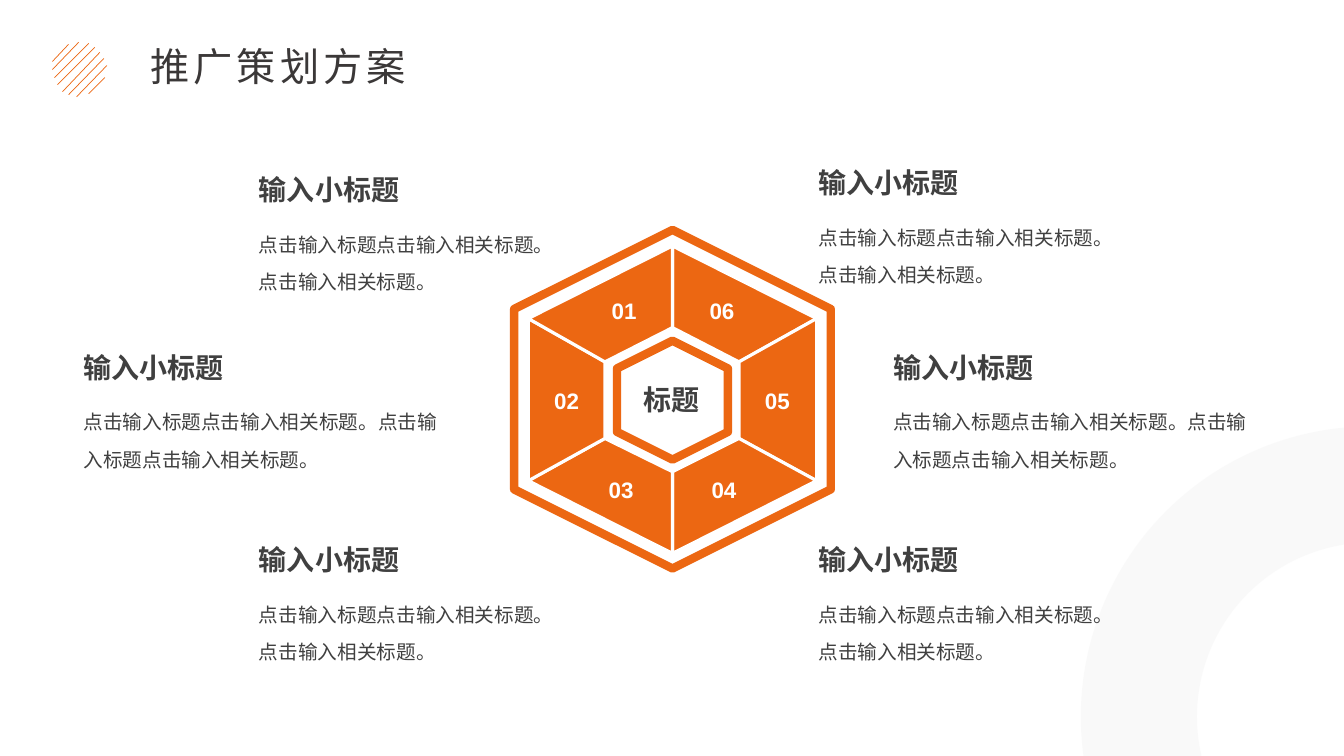
from dataclasses import dataclass

from lxml import etree
from pptx import Presentation, util as u
from pptx.dml.color import RGBColor
from pptx.enum import shapes, text
from pptx.oxml import ns

PX = 9144
FONT = "Arial"
COLORS = {
    "accent": "EC6712",
    "title": "3B3838",
    "body": "404040",
    "white": "FFFFFF",
    "ring": "F2F2F2",
}
CENTER = text.PP_ALIGN.CENTER
MIDDLE = text.MSO_ANCHOR.MIDDLE


@dataclass(frozen=True)
class Box:
    x: int
    y: int
    w: int
    h: int

    def emu(self) -> list[int]:
        return [v * PX for v in (self.x, self.y, self.w, self.h)]


@dataclass(frozen=True)
class Style:
    size: int
    color: str = "body"
    bold: bool = False
    align: text.PP_ALIGN | None = None
    anchor: text.MSO_ANCHOR = text.MSO_ANCHOR.TOP
    leading: float | None = None
    spacing: int = 0
    grow: bool = False


@dataclass(frozen=True)
class Card:
    x: int
    y: int
    w: int
    body: str


@dataclass(frozen=True)
class Number:
    label: str
    x: int
    y: int


@dataclass(frozen=True)
class Stripe:
    x1: int
    y1: int
    x2: int
    y2: int


TITLE = Style(28, "title", leading=0.9, spacing=300, grow=True)
HEADING = Style(20, bold=True, anchor=MIDDLE)
BODY = Style(14, leading=1.6)
CORE = Style(20, bold=True, align=CENTER, anchor=MIDDLE)
NUMBER = Style(16, "white", bold=True, align=CENTER, grow=True)

SHORT = "点击输入标题点击输入相关标题。点击输入相关标题。"
LONG = "点击输入标题点击输入相关标题。点击输入标题点击输入相关标题。"
CARDS = [
    Card(247, 164, 330, SHORT),
    Card(247, 531, 330, SHORT),
    Card(73, 340, 383, LONG),
    Card(876, 340, 383, LONG),
    Card(802, 157, 330, SHORT),
    Card(802, 531, 330, SHORT),
]
NUMBERS = [
    Number("01", 595, 290),
    Number("02", 538, 379),
    Number("03", 592, 467),
    Number("04", 694, 467),
    Number("05", 747, 379),
    Number("06", 692, 290),
]
STRIPES = [
    Stripe(52, 69, 78, 42),
    Stripe(54, 77, 88, 43),
    Stripe(57, 84, 94, 47),
    Stripe(62, 91, 99, 52),
    Stripe(68, 94, 103, 58),
    Stripe(76, 96, 106, 65),
    Stripe(88, 93, 104, 77),
    Stripe(52, 61, 68, 44),
]
OUTER = [(667, 244), (810, 316), (810, 477), (667, 549), (524, 477), (524, 316)]
INNER = [(667, 325), (733, 359), (733, 435), (667, 468), (600, 435), (600, 359)]
HEXAGONS = [Box(499, 239, 336, 314), Box(608, 342, 118, 110)]


def rgb(name: str) -> RGBColor:
    return RGBColor.from_string(COLORS[name])


def add_text(parent, box: Box, content: str, style: Style) -> None:
    tf = parent.add_textbox(*box.emu()).text_frame
    tf.word_wrap = not style.grow
    if style.grow:
        tf.auto_size = text.MSO_AUTO_SIZE.SHAPE_TO_FIT_TEXT
    tf.vertical_anchor = style.anchor
    p = tf.paragraphs[0]
    p.alignment = style.align
    p.line_spacing = style.leading
    r = p.add_run()
    r.text = content
    r.font.name = FONT
    r.font.size = u.Pt(style.size)
    r.font.bold = style.bold
    r.font.color.rgb = rgb(style.color)
    if style.spacing:
        r._r.get_or_add_rPr().set("spc", str(style.spacing))


def add_stripe(parent, stripe: Stripe) -> None:
    ends = [v * PX for v in (stripe.x1, stripe.y1, stripe.x2, stripe.y2)]
    line = parent.add_connector(shapes.MSO_CONNECTOR.STRAIGHT, *ends)
    line.line.color.rgb = rgb("accent")
    line.line.width = u.Pt(0.5)
    etree.SubElement(line._element.spPr, ns.qn("a:effectLst"))


def add_ring(parent, box: Box) -> None:
    sp = parent.add_shape(shapes.MSO_SHAPE.DONUT, *box.emu())
    sp.shadow.inherit = False
    sp.adjustments[0] = 0.2
    sp.fill.solid()
    sp.fill.fore_color.rgb = rgb("ring")
    sp.line.fill.background()
    color = sp._element.spPr.find(".//" + ns.qn("a:srgbClr"))
    etree.SubElement(color, ns.qn("a:alpha"), val="40000")


def add_segment(parent, corners: list[tuple[int, int]]) -> None:
    builder = parent.build_freeform(*corners[0], scale=PX)
    builder.add_line_segments(corners[1:], close=True)
    sp = builder.convert_to_shape()
    sp.shadow.inherit = False
    sp.fill.solid()
    sp.fill.fore_color.rgb = rgb("accent")
    sp.line.color.rgb = rgb("white")
    sp.line.width = u.Pt(2.25)


def add_hexagon(parent, box: Box) -> None:
    sp = parent.add_shape(shapes.MSO_SHAPE.HEXAGON, *box.emu())
    sp.shadow.inherit = False
    sp.rotation = 270
    sp.fill.background()
    sp.line.color.rgb = rgb("accent")
    sp.line.width = u.Pt(6)


def add_card(parent, card: Card) -> None:
    group = parent.add_group_shape().shapes
    add_text(group, Box(card.x, card.y + 48, card.w, 65), card.body, BODY)
    add_text(group, Box(card.x, card.y, card.w, 48), "输入小标题", HEADING)


def main() -> None:
    prs = Presentation()
    prs.slide_width, prs.slide_height = 1333 * PX, 750 * PX
    s = prs.slides.add_slide(prs.slide_layouts[6]).shapes
    add_text(s, Box(139, 42, 279, 54), "推广策划方案", TITLE)
    emblem = s.add_group_shape().shapes
    for stripe in STRIPES:
        add_stripe(emblem, stripe)
    add_ring(s, Box(1072, 423, 576, 576))
    for i in range(6):
        j = (i + 1) % 6
        add_segment(s, [OUTER[i], OUTER[j], INNER[j], INNER[i]])
    for box in HEXAGONS:
        add_hexagon(s, box)
    add_text(s, Box(613, 364, 107, 64), "标题", CORE)
    for card in CARDS:
        add_card(s, card)
    for number in NUMBERS:
        add_text(s, Box(number.x, number.y, 48, 37), number.label, NUMBER)
    prs.save("out.pptx")


if __name__ == "__main__":
    main()
